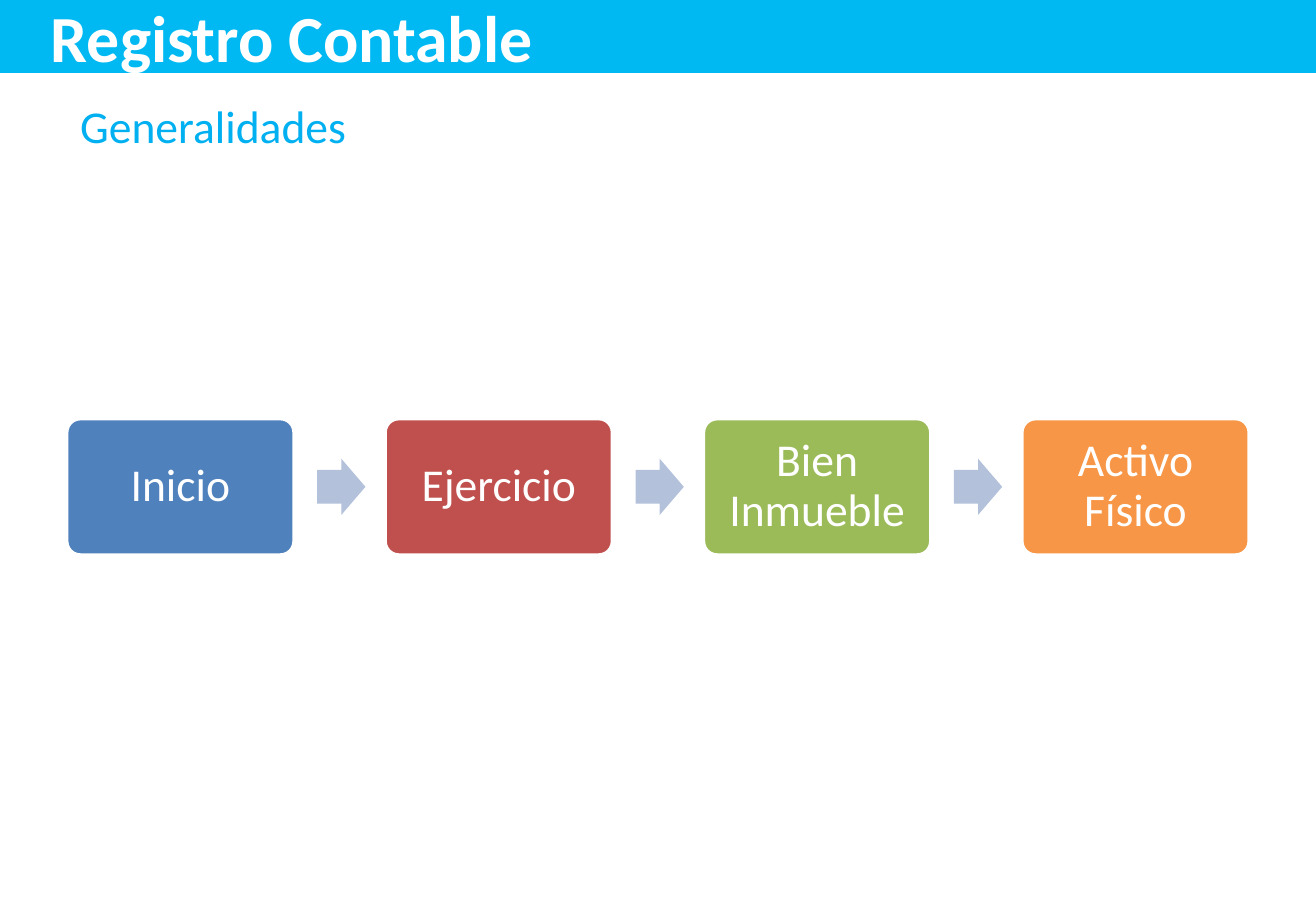
from lxml import etree
from pptx import Presentation
from pptx.dml.color import RGBColor
from pptx.enum import shapes, text
from pptx.oxml import ns
from pptx.util import Pt

TITLE = "Registro Contable"
SUBTITLE = "Generalidades"
STEPS = [("Inicio", "blue"), ("Ejercicio", "red"),
         ("Bien Inmueble", "green"), ("Activo Físico", "orange")]
COLORS = {"bar": "00B9F2", "subtitle": "00B0F0", "white": "FFFFFF",
          "arrow": "B3C1DB", "blue": "4F81BD", "red": "C0504D",
          "green": "9BBB59", "orange": "F79646"}
FONT = "Calibri"

SLIDE_W, SLIDE_H = 780, 540
BAR_H = 43.2
STEP_LEFT, STEP_W, STEP_H, PITCH = 39.6, 134.7, 80.8, 188.7
ARROW_OFFSET, ARROW_W, ARROW_H = 148.4, 28.6, 33.4
MIDDLE = 288.6


def color(name):
    return RGBColor.from_string(COLORS[name])


def place(sp, left, top, width, height):
    sp.left, sp.top, sp.width, sp.height = map(Pt, (left, top, width, height))


def write(sp, words, size, ink, align, anchor, inset_x, inset_y, bold=False):
    tf = sp.text_frame
    tf.word_wrap = True
    tf.auto_size = text.MSO_AUTO_SIZE.NONE
    tf.vertical_anchor = anchor
    tf.margin_left = tf.margin_right = Pt(inset_x)
    tf.margin_top = tf.margin_bottom = Pt(inset_y)
    p = tf.paragraphs[0]
    p.alignment = align
    r = p.add_run()
    r.text = words
    r.font.name, r.font.size, r.font.bold = FONT, Pt(size), bold
    r.font.color.rgb = color(ink)
    return p


def add_filled(slide, kind, fill, left, width, height):
    """Add a flat shape centred on the row of steps."""
    sp = slide.shapes.add_shape(kind, Pt(left), Pt(MIDDLE - height / 2),
                                Pt(width), Pt(height))
    sp.shadow.inherit = False
    sp.fill.solid()
    sp.fill.fore_color.rgb = color(fill)
    return sp


prs = Presentation()
prs.slide_width, prs.slide_height = Pt(SLIDE_W), Pt(SLIDE_H)
slide = prs.slides.add_slide(prs.slide_layouts[1])
LEFT, CENTER = text.PP_ALIGN.LEFT, text.PP_ALIGN.CENTER
TOP, MID = text.MSO_ANCHOR.TOP, text.MSO_ANCHOR.MIDDLE

title = slide.shapes.title
place(title, 0, 0, SLIDE_W, BAR_H)
title.fill.solid()
title.fill.fore_color.rgb = color("bar")
write(title, TITLE, 39, "white", LEFT, MID, 30.2, 3.6, bold=True)

body = slide.placeholders[1]
place(body, STEP_LEFT, 54.7, 700.6, 51.1)
p = write(body, SUBTITLE, 27, "subtitle", LEFT, TOP, 7.9, 3.6)
pPr = p._p.get_or_add_pPr()
pPr.set("marL", "0")
pPr.set("indent", "0")
etree.SubElement(pPr, ns.qn("a:buNone"))

for i, (name, fill) in enumerate(STEPS):
    left = STEP_LEFT + i * PITCH
    box = add_filled(slide, shapes.MSO_SHAPE.ROUNDED_RECTANGLE, fill,
                     left, STEP_W, STEP_H)
    box.adjustments[0] = 0.1
    box.line.color.rgb = color("white")
    box.line.width = Pt(2)
    p = write(box, name, 27, "white", CENTER, MID, 7.9, 7.9)
    p.line_spacing = 0.9
    if i < len(STEPS) - 1:
        arrow = add_filled(slide, shapes.MSO_SHAPE.RIGHT_ARROW, "arrow",
                           left + ARROW_OFFSET, ARROW_W, ARROW_H)
        arrow.adjustments[0] = 0.6
        arrow.line.fill.background()

prs.save("out.pptx")
